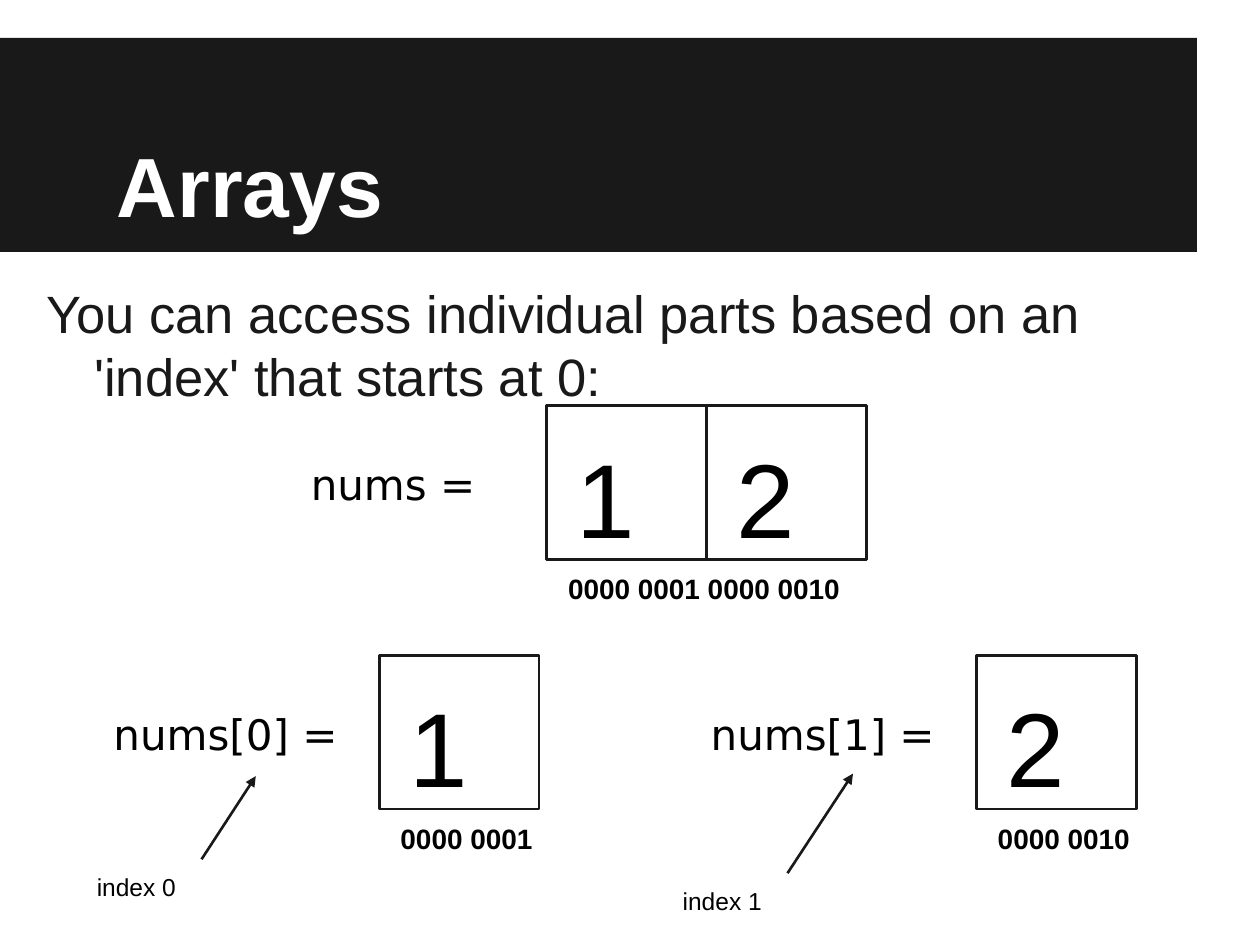
from pptx import Presentation
from pptx.dml.color import RGBColor
from pptx.enum.dml import MSO_LINE
from pptx.enum.shapes import MSO_CONNECTOR, MSO_SHAPE
from pptx.enum.text import MSO_ANCHOR, MSO_AUTO_SIZE, PP_ALIGN
from pptx.oxml.ns import qn
from pptx.util import Pt
from lxml import etree

RECT = MSO_SHAPE.RECTANGLE
STRAIGHT = MSO_CONNECTOR.STRAIGHT
SOLID = MSO_LINE.SOLID
TOP, BOTTOM = MSO_ANCHOR.TOP, MSO_ANCHOR.BOTTOM
LEFT, CENTER = PP_ALIGN.LEFT, PP_ALIGN.CENTER
GROW = MSO_AUTO_SIZE.SHAPE_TO_FIT_TEXT
INK, BLACK, WHITE = "191919", "000000", "FFFFFF"
CELL_W, CELL_H = 91.44, 87.84


def color(hex_value):
    return RGBColor.from_string(hex_value)


def add_text(text, left, top, width, height, size, font="Arial", ink=BLACK,
             bold=False, align=LEFT, anchor=TOP):
    box = slide.shapes.add_textbox(Pt(left), Pt(top), Pt(width), Pt(height))
    frame = box.text_frame
    frame_format = {
        "word_wrap": True, "auto_size": GROW, "vertical_anchor": anchor,
        "margin_left": Pt(7.2), "margin_right": Pt(7.2),
        "margin_top": Pt(7.2), "margin_bottom": Pt(7.2),
    }
    for key, value in frame_format.items():
        setattr(frame, key, value)
    paragraph = frame.paragraphs[0]
    paragraph.text = text
    paragraph.alignment = align
    for key, value in {"name": font, "size": Pt(size), "bold": bold}.items():
        setattr(paragraph.runs[0].font, key, value)
    paragraph.runs[0].font.color.rgb = color(ink)
    return paragraph


prs = Presentation()
prs.slide_width, prs.slide_height = Pt(720), Pt(540)
slide = prs.slides.add_slide(prs.slide_layouts[6])

# Title band
band = slide.shapes.add_shape(RECT, Pt(0), Pt(21.6), Pt(684), Pt(122.4))
band.shadow.inherit = False
band.fill.solid()
band.fill.fore_color.rgb = color(INK)
band.line.fill.background()
title = add_text("Arrays", 36, 21.6, 648, 119.52, 48, ink=WHITE, bold=True,
                 anchor=BOTTOM)
title._p.get_or_add_pPr().set("indent", str(Pt(23.76)))

# Statement with a hanging indent
statement = add_text(
    "You can access individual parts based on an 'index' that starts at 0:",
    19.44, 153.36, 689.04, 72.72, 30, ink=INK)
statement.space_before = Pt(6)
for key, value in {"marL": Pt(27.36), "indent": Pt(-27.36)}.items():
    statement._p.get_or_add_pPr().set(key, str(value))

# Arrays: label, left, top, values, binary text, binary width
arrays = [
    ("nums =", 312.48, 231.84, "12", "0000 0001 0000 0010", 183.6),
    ("nums[0] =", 216.72, 374.4, "1", "0000 0001", 92.16),
    ("nums[1] =", 558, 374.4, "2", "0000 0010", 92.16),
]
for label, left, top, values, binary, binary_width in arrays:
    for position, value in enumerate(values):
        cell_left = left + position * CELL_W
        cell = slide.shapes.add_shape(RECT, Pt(cell_left), Pt(top),
                                      Pt(CELL_W), Pt(CELL_H))
        cell.shadow.inherit = False
        cell.fill.background()
        cell.line.color.rgb = color(INK)
        cell.line.width = Pt(1.5)
        add_text(value, cell_left + 10.08, top + 8.64, 71.28, 59.04, 60)
    add_text(binary, left + 5.04, top + CELL_H, binary_width, 30.96, 16,
             bold=True)
    add_text(label, left - 172.08, top + 23.04, 168.48, 46.8, 24,
             font="DejaVu Sans", align=CENTER)

# Index notes, each with an arrow up to its label
notes = [
    ("index 0", 48.24, 491.04, (146.16, 443.52)),
    ("index 1", 383.04, 498.96, (487.44, 442.08)),
]
for note, left, top, (tip_x, tip_y) in notes:
    add_text(note, left, top, 133.92, 25.2, 14)
    arrow = slide.shapes.add_connector(STRAIGHT, Pt(left + 66.96), Pt(top),
                                       Pt(tip_x), Pt(tip_y))
    arrow.line.color.rgb = color(INK)
    arrow.line.width = Pt(1.5)
    arrow.line.dash_style = SOLID
    etree.SubElement(arrow.line._get_or_add_ln(), qn("a:tailEnd"),
                     type="triangle", w="med", len="med")
    etree.SubElement(arrow._element.spPr, qn("a:effectLst"))

prs.save("out.pptx")
